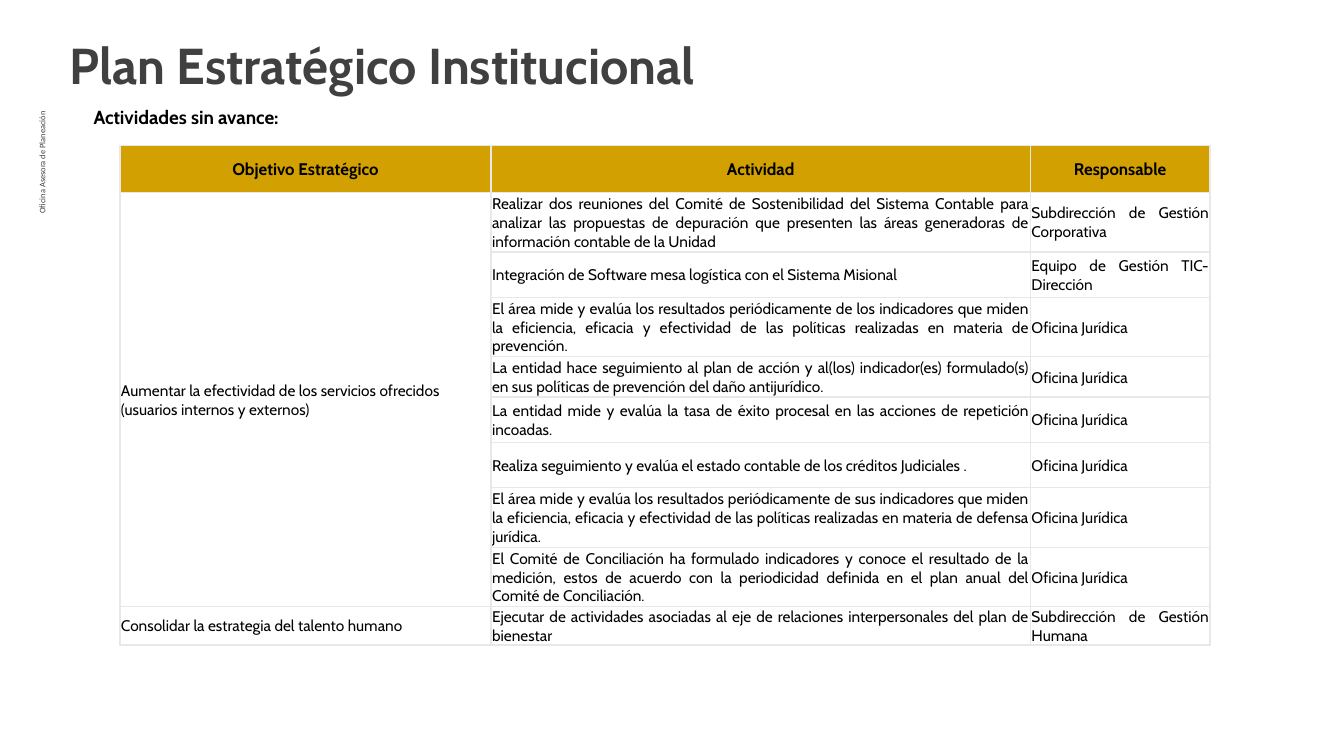
"""Builds the slide of strategic plan activities without progress."""
from lxml import etree
from pptx import Presentation
from pptx.dml.color import RGBColor
from pptx.enum.text import MSO_ANCHOR, PP_ALIGN
from pptx.oxml.ns import qn
from pptx.util import Inches, Pt

LEFT, CENTER, RIGHT, JUSTIFY = PP_ALIGN.LEFT, PP_ALIGN.CENTER, PP_ALIGN.RIGHT, PP_ALIGN.JUSTIFY
MIDDLE = MSO_ANCHOR.MIDDLE

BLACK, GREY, GOLD, BORDER = "000000", "404040", "D2A000", "E8E8E8"
BORDER_WIDTH = Pt(1)

TITLE = "Plan Estratégico Institucional"
OFFICE = "Oficina Asesora de Planeación"
SUBTITLE = "Actividades sin avance:"

HEADERS = ("Objetivo Estratégico", "Actividad", "Responsable")
LEGAL = "Oficina Jurídica"
OBJECTIVES = [
    ("Aumentar la efectividad de los servicios ofrecidos (usuarios internos y externos)", [
        ("Realizar dos reuniones del Comité de Sostenibilidad del Sistema Contable para analizar "
         "las propuestas de depuración que presenten las áreas generadoras de información "
         "contable de la Unidad", "Subdirección de Gestión Corporativa", 0.59),
        ("Integración de Software mesa logística con el Sistema Misional",
         "Equipo de Gestión TIC- Dirección", 0.45),
        ("El área mide y evalúa los resultados periódicamente de los indicadores que miden la "
         "eficiencia, eficacia y efectividad de las políticas realizadas en materia de "
         "prevención.", LEGAL, 0.59),
        ("La entidad hace seguimiento al plan de acción y al(los) indicador(es) formulado(s) en "
         "sus políticas de prevención del daño antijurídico.", LEGAL, 0.4),
        ("La entidad mide y evalúa la tasa de éxito procesal en las acciones de repetición "
         "incoadas.", LEGAL, 0.45),
        ("Realiza seguimiento y evalúa el estado contable de los créditos Judiciales .",
         LEGAL, 0.45),
        ("El área mide y evalúa los resultados periódicamente de sus indicadores que miden la "
         "eficiencia, eficacia y efectividad de las políticas realizadas en materia de defensa "
         "jurídica.", LEGAL, 0.59),
        ("El Comité de Conciliación ha formulado indicadores y conoce el resultado de la "
         "medición, estos de acuerdo con la periodicidad definida en el plan anual del Comité "
         "de Conciliación.", LEGAL, 0.59),
    ]),
    ("Consolidar la estrategia del talento humano", [
        ("Ejecutar de actividades asociadas al eje de relaciones interpersonales del plan de "
         "bienestar", "Subdirección de Gestión Humana", 0.38),
    ]),
]
TABLE_LEFT, TABLE_TOP = 1.19, 1.44
COLUMN_WIDTHS = (3.68, 5.35, 1.78)
HEADER_HEIGHT = 0.47


def color(hex_code):
    return RGBColor.from_string(hex_code)


def write(frame, text, size, font, hex_code, bold, align):
    frame.word_wrap = True
    frame.text = text
    paragraph = frame.paragraphs[0]
    paragraph.alignment = align
    run_font = paragraph.runs[0].font
    run_font.size, run_font.name, run_font.bold = Pt(size), font, bold
    run_font.color.rgb = color(hex_code)


def add_label(slide, box, text, size, font, hex_code, bold=False, align=LEFT):
    label = slide.shapes.add_textbox(*map(Inches, box))
    write(label.text_frame, text, size, font, hex_code, bold, align)
    return label


def style_cell(cell, fill=None):
    cell.vertical_anchor = MIDDLE
    cell.margin_left = cell.margin_right = cell.margin_top = Inches(0.01)
    cell.margin_bottom = 0
    properties = cell._tc.get_or_add_tcPr()
    for side in ("a:lnL", "a:lnR", "a:lnT", "a:lnB"):
        line = etree.SubElement(properties, qn(side), w=str(BORDER_WIDTH))
        solid = etree.SubElement(line, qn("a:solidFill"))
        etree.SubElement(solid, qn("a:srgbClr"), val=BORDER)
    if fill:
        cell.fill.solid()
        cell.fill.fore_color.rgb = color(fill)
    else:
        cell.fill.background()


def add_activity_table(slide):
    heights = [HEADER_HEIGHT] + [row[2] for _, rows in OBJECTIVES for row in rows]
    table = slide.shapes.add_table(
        len(heights), len(HEADERS), Inches(TABLE_LEFT), Inches(TABLE_TOP),
        Inches(sum(COLUMN_WIDTHS)), Inches(sum(heights))).table
    table.horz_banding = False
    for column, width in zip(table.columns, COLUMN_WIDTHS):
        column.width = Inches(width)
    for index, height in enumerate(heights):
        table.rows[index].height = Inches(height)
        for column in range(len(HEADERS)):
            style_cell(table.cell(index, column), GOLD if index == 0 else None)

    def fill_cell(row, column, text, size=11, bold=False, align=JUSTIFY):
        write(table.cell(row, column).text_frame, text, size, "Cabin", BLACK, bold, align)

    for column, header in enumerate(HEADERS):
        fill_cell(0, column, header, 12, True, CENTER)
    first = 1
    for objective, activities in OBJECTIVES:
        last = first + len(activities) - 1
        if last > first:
            table.cell(first, 0).merge(table.cell(last, 0))
        fill_cell(first, 0, objective, align=LEFT)
        for row, (activity, responsible, _) in enumerate(activities, first):
            fill_cell(row, 1, activity)
            fill_cell(row, 2, responsible)
        first = last + 1


def main():
    deck = Presentation()
    deck.slide_width, deck.slide_height = Inches(13.33), Inches(7.5)
    slide = deck.slides.add_slide(deck.slide_layouts[6])
    add_label(slide, (0.59, 0.29, 10.66, 0.71), TITLE, 36, "Cabin", GREY, True)
    office = add_label(slide, (-0.88, 2.24, 2.59, 0.18), OFFICE, 6, "Calibri", GREY, align=RIGHT)
    office.rotation = 270
    frame = office.text_frame
    frame.margin_left = frame.margin_right = Inches(0.07)
    frame.margin_top = frame.margin_bottom = Inches(0.04)
    add_label(slide, (0.83, 1, 2.66, 0.33), SUBTITLE, 13.5, "Cabin", BLACK, True)
    add_activity_table(slide)
    deck.save("out.pptx")


if __name__ == "__main__":
    main()
